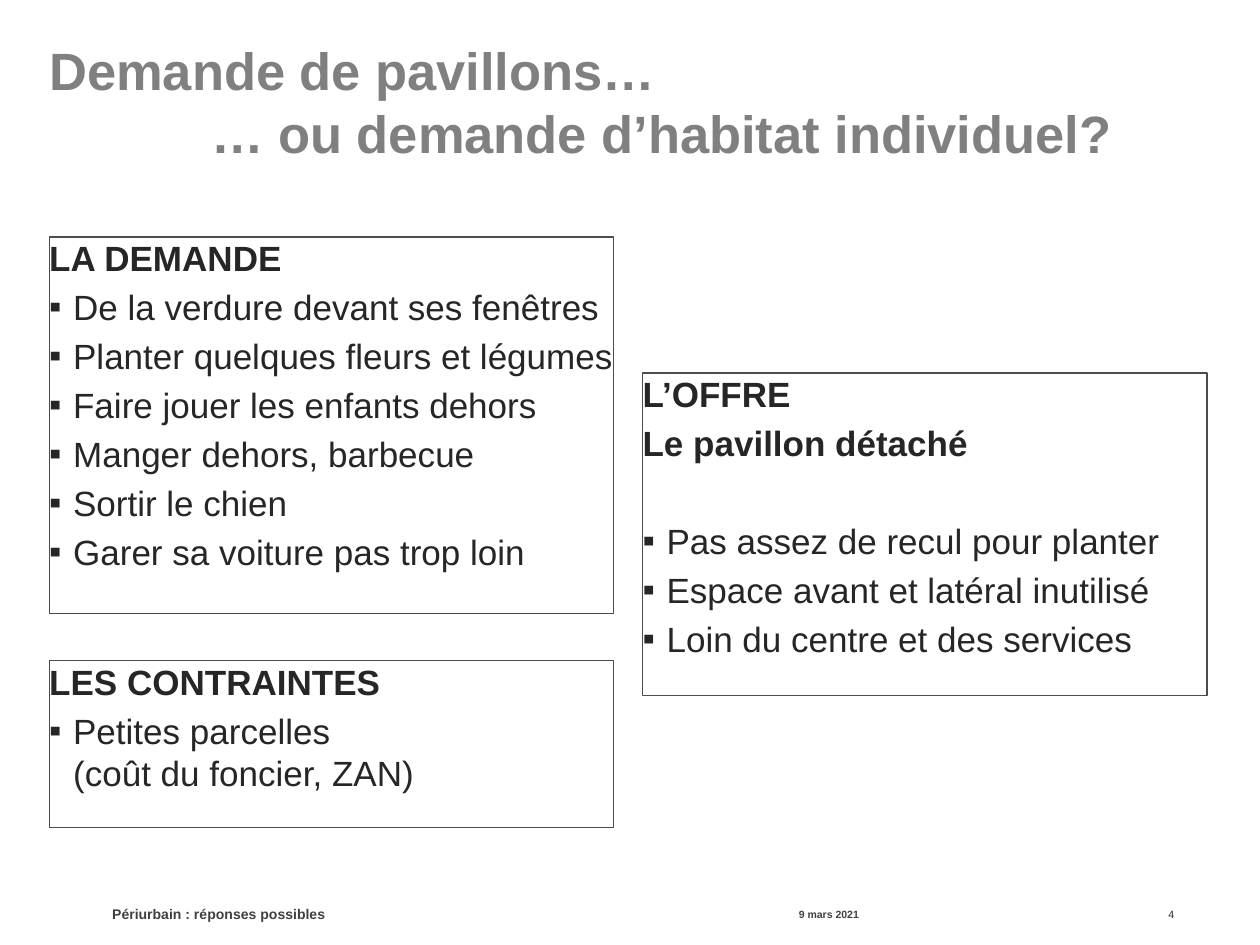
from dataclasses import dataclass

from lxml.etree import SubElement
from pptx import Presentation
from pptx.dml.color import RGBColor
from pptx.enum.shapes import MSO_SHAPE
from pptx.enum.text import MSO_ANCHOR, PP_ALIGN
from pptx.oxml.ns import qn
from pptx.util import Inches, Pt

COLORS = {"title": "808080", "body": "262626", "foot": "404040", "frame": "4C4C4C"}
LEFT, WIDTH = 0.39, 4.48
INDENT = Inches(0.19)
GAP = 4


@dataclass
class Label:
    text: str
    box: tuple[float, float, float, float]
    size: int
    color: str
    bold: bool = True
    wrap: bool = True
    align: PP_ALIGN = PP_ALIGN.LEFT
    anchor: MSO_ANCHOR = MSO_ANCHOR.TOP
    tab: float = 0


@dataclass
class Panel:
    box: tuple[float, float, float, float]
    heads: list[str]
    items: list[str]
    lead: int = GAP  # space before the first bullet, in points


LABELS = [
    Label("Demande de pavillons…\v\t… ou demande d’habitat individuel?",
          (LEFT, 0.3, 8.93, 1.04), 30, "title", tab=8.44),
    Label("Périurbain : réponses possibles", (0.89, 7.13, 5.42, 0.24), 8, "foot",
          anchor=MSO_ANCHOR.MIDDLE),
    Label("9 mars 2021", (6.34, 7.14, 2.6, 0.24), 6, "foot", anchor=MSO_ANCHOR.MIDDLE),
    Label("4", (8.94, 7.21, 0.38, 0.17), 6, "body", bold=False, wrap=False,
          align=PP_ALIGN.RIGHT),
]

PANELS = [
    Panel((LEFT, 1.88, WIDTH, 2.99), ["LA DEMANDE"], [
        "De la verdure devant ses fenêtres",
        "Planter quelques fleurs et légumes",
        "Faire jouer les enfants dehors",
        "Manger dehors, barbecue",
        "Sortir le chien",
        "Garer sa voiture pas trop loin",
    ]),
    Panel((LEFT, 5.24, WIDTH, 1.33), ["LES CONTRAINTES"],
          ["Petites parcelles\v(coût du foncier, ZAN)"]),
    Panel((5.1, 2.96, WIDTH, 2.56), ["L’OFFRE", "Le pavillon détaché"], [
        "Pas assez de recul pour planter",
        "Espace avant et latéral inutilisé",
        "Loin du centre et des services",
    ], lead=32),
]


def style(font, size: int, color: str, bold: bool) -> None:
    for name, value in {"name": "Arial", "size": Pt(size), "bold": bold}.items():
        setattr(font, name, value)
    font.color.rgb = RGBColor.from_string(COLORS[color])


def setup(frame, anchor: MSO_ANCHOR, wrap: bool = True) -> None:
    """Give a text frame zero margins, an anchor and its wrapping."""
    values = {"margin_left": 0, "margin_right": 0, "margin_top": 0,
              "margin_bottom": 0, "vertical_anchor": anchor, "word_wrap": wrap}
    for name, value in values.items():
        setattr(frame, name, value)


def add_label(slide, label: Label) -> None:
    box = slide.shapes.add_textbox(*map(Inches, label.box))
    setup(box.text_frame, label.anchor, label.wrap)
    para = box.text_frame.paragraphs[0]
    para.text = label.text
    para.alignment = label.align
    if label.tab:
        tabs = SubElement(para._p.get_or_add_pPr(), qn("a:tabLst"))
        SubElement(tabs, qn("a:tab"), pos=str(Inches(label.tab)), algn="r")
    style(para.font, label.size, label.color, label.bold)


def add_bullet(para) -> None:
    props = para._p.get_or_add_pPr()
    props.set("marL", str(INDENT))
    props.set("indent", str(-INDENT))
    SubElement(props, qn("a:buFont"), typeface="Arial")
    SubElement(props, qn("a:buChar"), char="▪")


def add_panel(slide, panel: Panel) -> None:
    shape = slide.shapes.add_shape(MSO_SHAPE.RECTANGLE, *map(Inches, panel.box))
    shape.shadow.inherit = False
    shape.fill.background()
    shape.line.color.rgb = RGBColor.from_string(COLORS["frame"])
    shape.line.width = Pt(0.75)
    frame = shape.text_frame
    setup(frame, MSO_ANCHOR.TOP)
    count = len(panel.heads)
    for i, text in enumerate(panel.heads + panel.items):
        para = frame.add_paragraph() if i else frame.paragraphs[0]
        para.text = text
        para.alignment = PP_ALIGN.LEFT
        if i:
            para.space_before = Pt(panel.lead if i == count else GAP)
        if i >= count:
            add_bullet(para)
        style(para.font, 20, "body", i < count)


def main() -> None:
    deck = Presentation()
    deck.slide_width, deck.slide_height = Inches(10), Inches(7.5)
    slide = deck.slides.add_slide(deck.slide_layouts[6])
    for label in LABELS:
        add_label(slide, label)
    for panel in PANELS:
        add_panel(slide, panel)
    deck.save("out.pptx")


if __name__ == "__main__":
    main()
